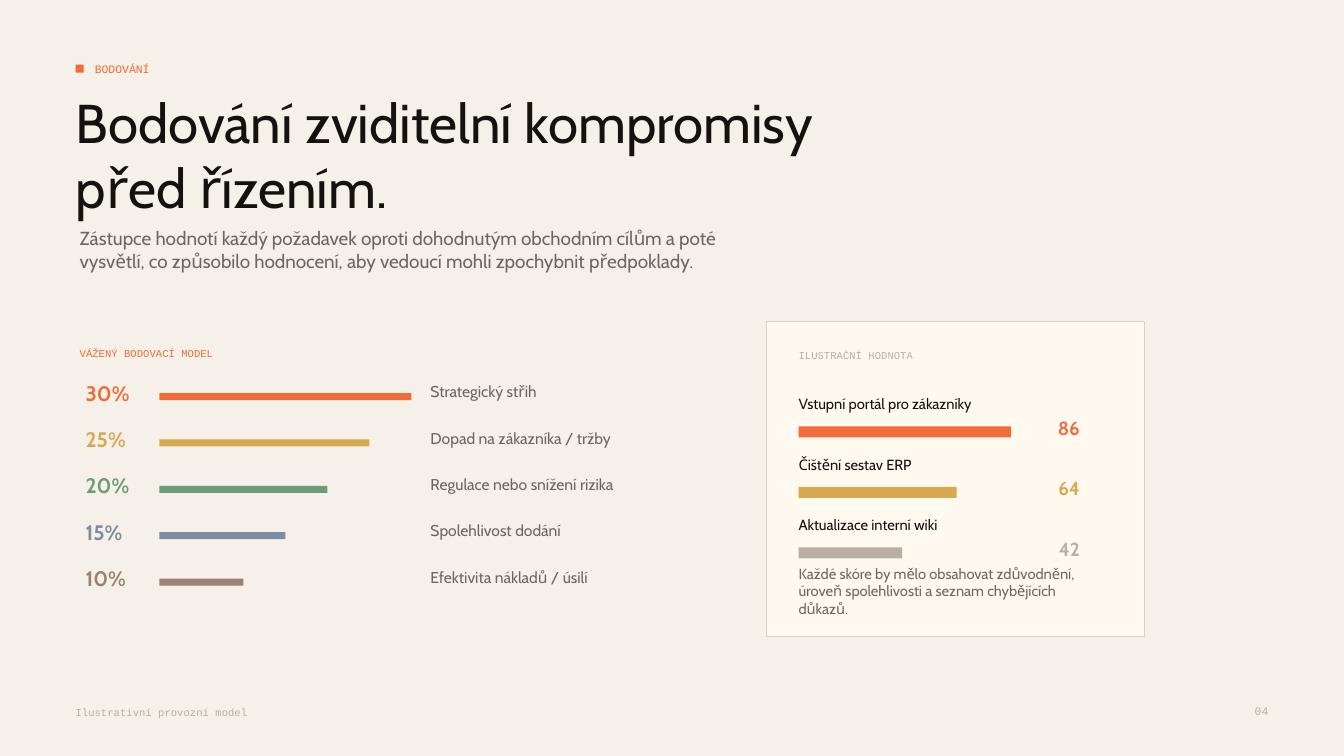
from dataclasses import dataclass

from pptx import Presentation
from pptx.dml.color import RGBColor
from pptx.enum import shapes, text
from pptx.util import Inches, Pt


@dataclass(frozen=True)
class Theme:
    sans: str = "Cabin"
    mono: str = "Courier New"
    paper: str = "F5F0E8"
    card: str = "FFF9EF"
    border: str = "D9D0C6"
    ink: str = "15110E"
    muted: str = "6F675F"
    faint: str = "B8AEA4"
    orange: str = "F26B3A"
    gold: str = "D6A84F"
    green: str = "6E9B78"
    blue: str = "7E8BA3"
    brown: str = "9B8272"
    title: float = 39
    percent: float = 15
    lead: float = 13.5
    label: float = 11.2
    body: float = 10.5
    tag: float = 8.2
    caption: float = 7.5


class SlideBuilder:
    def __init__(self, slide, theme):
        self.slide = slide
        self.theme = theme
        slide.background.fill.solid()
        slide.background.fill.fore_color.rgb = RGBColor.from_string(theme.paper)

    def add_text(self, words, left, top, width, height, *, size, color, font=None,
                 bold=False, align=text.PP_ALIGN.LEFT, anchor=text.MSO_ANCHOR.TOP):
        box = self.slide.shapes.add_textbox(
            Inches(left), Inches(top), Inches(width), Inches(height))
        frame = box.text_frame
        frame.word_wrap = True
        frame.vertical_anchor = anchor
        frame.margin_left = frame.margin_right = 0
        frame.margin_top = frame.margin_bottom = 0
        paragraph = frame.paragraphs[0]
        paragraph.alignment = align
        run = paragraph.add_run()
        run.text = words
        run.font.name = font or self.theme.sans
        run.font.size = Pt(size)
        run.font.bold = bold
        run.font.color.rgb = RGBColor.from_string(color)

    def add_rect(self, left, top, width, height, fill, border=None):
        shape = self.slide.shapes.add_shape(
            shapes.MSO_SHAPE.RECTANGLE,
            Inches(left), Inches(top), Inches(width), Inches(height))
        shape.shadow.inherit = False
        shape.fill.solid()
        shape.fill.fore_color.rgb = RGBColor.from_string(fill)
        if border:
            shape.line.color.rgb = RGBColor.from_string(border)
            shape.line.width = Pt(0.75)
        else:
            shape.line.fill.background()

    def add_weight(self, index, percent, criterion, color):
        t = self.theme
        drop = 0.46 * index
        self.add_text(f"{percent}%", 0.85, 3.77 + drop, 0.6, 0.25,
                      size=t.percent, color=color, bold=True)
        self.add_rect(1.58, 3.9 + drop, 2.5 * percent / 30, 0.07, color)
        self.add_text(criterion, 4.27, 3.79 + drop, 2.6, 0.21,
                      size=t.label, color=t.muted)

    def add_score(self, index, request, score, color):
        t = self.theme
        drop = 0.6 * index
        self.add_text(request, 7.92, 3.92 + drop, 2.19, 0.23,
                      size=t.body, color=t.ink)
        self.add_rect(7.92, 4.23 + drop, 2.45 * score / 100, 0.11, color)
        self.add_text(str(score), 10.21, 4.13 + drop, 0.5, 0.23, size=t.lead,
                      color=color, bold=True, align=text.PP_ALIGN.RIGHT)


def main():
    deck = Presentation()
    deck.slide_width = Inches(13.33)
    deck.slide_height = Inches(7.5)
    t = Theme()
    page = SlideBuilder(deck.slides.add_slide(deck.slide_layouts[6]), t)

    page.add_rect(0.75, 0.64, 0.08, 0.08, t.orange)
    page.add_text("BODOVÁNÍ", 0.94, 0.56, 4.38, 0.25, size=t.tag,
                  color=t.orange, font=t.mono, anchor=text.MSO_ANCHOR.MIDDLE)
    page.add_text("Bodování zviditelní kompromisy před řízením.",
                  0.75, 0.88, 8.12, 1.38, size=t.title, color=t.ink)
    page.add_text("Zástupce hodnotí každý požadavek oproti dohodnutým obchodním "
                  "cílům a poté vysvětlí, co způsobilo hodnocení, aby vedoucí "
                  "mohli zpochybnit předpoklady.",
                  0.79, 2.25, 6.77, 0.73, size=t.lead, color=t.muted)

    page.add_text("VÁŽENÝ BODOVACÍ MODEL", 0.79, 3.44, 2.92, 0.19,
                  size=t.caption, color=t.orange, font=t.mono)
    weights = [
        (30, "Strategický střih", t.orange),
        (25, "Dopad na zákazníka / tržby", t.gold),
        (20, "Regulace nebo snížení rizika", t.green),
        (15, "Spolehlivost dodání", t.blue),
        (10, "Efektivita nákladů / úsilí", t.brown),
    ]
    for index, weight in enumerate(weights):
        page.add_weight(index, *weight)

    page.add_rect(7.6, 3.19, 3.75, 3.12, t.card, border=t.border)
    page.add_text("ILUSTRAČNÍ HODNOTA", 7.92, 3.46, 1.88, 0.19,
                  size=t.caption, color=t.faint, font=t.mono)
    scores = [
        ("Vstupní portál pro zákazníky", 86, t.orange),
        ("Čištění sestav ERP", 64, t.gold),
        ("Aktualizace interní wiki", 42, t.faint),
    ]
    for index, score in enumerate(scores):
        page.add_score(index, *score)
    page.add_text("Každé skóre by mělo obsahovat zdůvodnění, úroveň "
                  "spolehlivosti a seznam chybějících důkazů.",
                  7.92, 5.6, 2.81, 0.54, size=t.body, color=t.muted)

    page.add_text("Ilustrativní provozní model", 0.75, 7, 3.33, 0.19,
                  size=t.caption, color=t.faint, font=t.mono)
    page.add_text("04", 12.08, 6.98, 0.5, 0.21, size=t.tag, color=t.faint,
                  font=t.mono, align=text.PP_ALIGN.RIGHT)

    deck.save("out.pptx")


if __name__ == "__main__":
    main()
